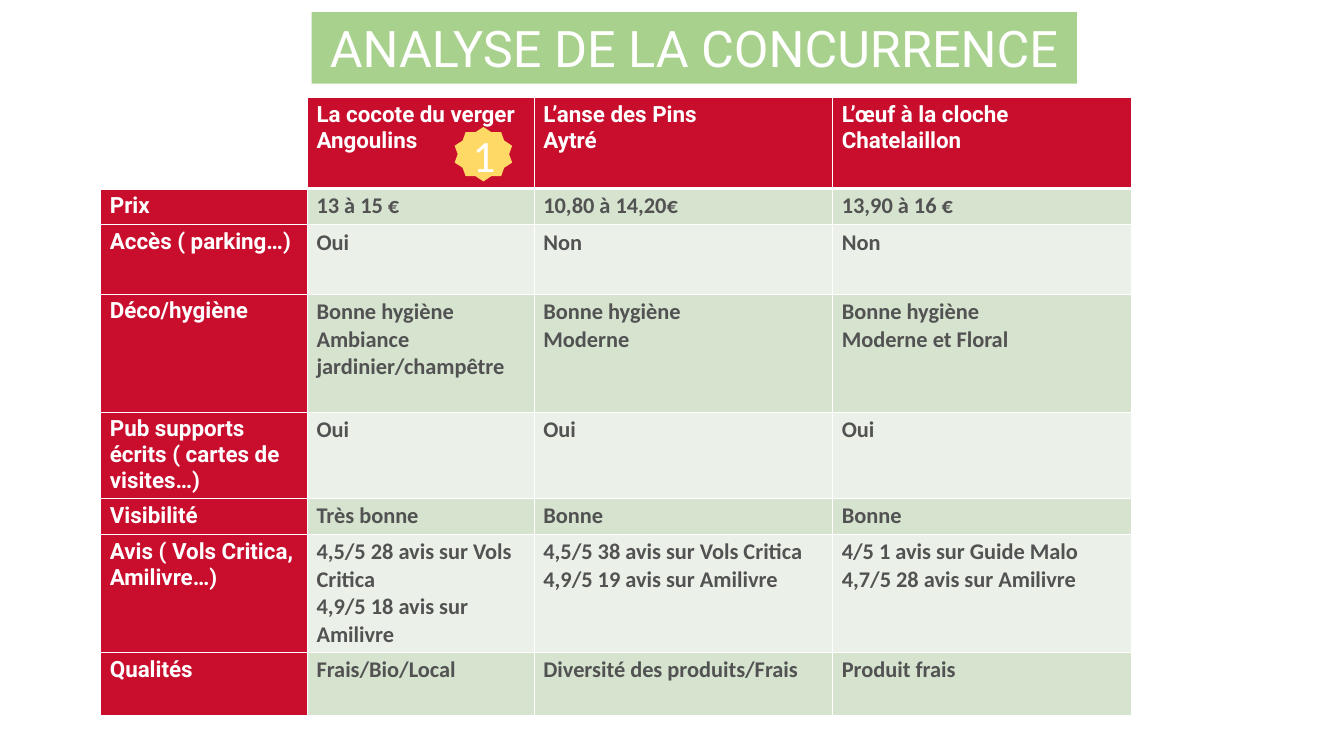
from pptx import Presentation
from pptx.util import Inches, Pt
from pptx.dml.color import RGBColor as RGB
from pptx.enum.shapes import MSO_SHAPE as Kind
from pptx.enum.text import PP_ALIGN as Align, MSO_ANCHOR as Anchor
from pptx.oxml import parse_xml
from pptx.oxml.ns import nsdecls

# Content
TITLE = "ANALYSE DE LA CONCURRENCE"
RANK = "1"
ROWS = [
    ("", "La cocote du verger\nAngoulins", "L’anse des Pins\nAytré",
     "L’œuf à la cloche\nChatelaillon"),
    ("Prix", "13 à 15 €", "10,80 à 14,20€", "13,90 à 16 €"),
    ("Accès ( parking…)", "Oui", "Non", "Non"),
    ("Déco/hygiène", "Bonne hygiène\nAmbiance jardinier/champêtre",
     "Bonne hygiène\nModerne", "Bonne hygiène\nModerne et Floral"),
    ("Pub supports écrits ( cartes de visites…)", "Oui", "Oui", "Oui"),
    ("Visibilité", "Très bonne", "Bonne", "Bonne"),
    ("Avis ( Vols Critica, Amilivre…)",
     "4,5/5 28 avis sur Vols Critica\n4,9/5 18 avis sur Amilivre",
     "4,5/5 38 avis sur Vols Critica\n4,9/5 19 avis sur Amilivre",
     "4/5 1 avis sur Guide Malo\n4,7/5 28 avis sur Amilivre"),
    ("Qualités", "Frais/Bio/Local", "Diversité des produits/Frais",
     "Produit frais"),
]
WIDTHS = [2.05, 2.25, 2.96, 2.96]
HEIGHTS = [0.9, 0.36, 0.69, 1.17, 0.78, 0.36, 1.17, 0.63]
COLORS = {"white": "FFFFFF", "red": "C90D2C", "dark": "D5E3CF",
          "light": "EBF1E9", "text": "525252", "title": "A9D18E",
          "star": "FFD966"}


def color(name):
    return RGB.from_string(COLORS[name])


def write(frame, text, size=16, font="Roboto", tint="white", bold=False,
          align=Align.LEFT):
    frame.word_wrap = True
    for i, line in enumerate(text.split("\n")):
        para = frame.paragraphs[0] if i == 0 else frame.add_paragraph()
        para.alignment = align
        run = para.add_run()
        run.text = line
        run.font.size, run.font.name, run.font.bold = Pt(size), font, bold
        run.font.color.rgb = color(tint)


def border(cell, base):
    props = cell._tc.get_or_add_tcPr()
    for i, side in enumerate("LRTB"):
        width = Pt(base if side == "B" else 1)
        props.insert(i, parse_xml(
            f'<a:ln{side} {nsdecls("a")} w="{width}"><a:solidFill>'
            f'<a:srgbClr val="{COLORS["white"]}"/></a:solidFill></a:ln{side}>'))


def badge(kind, box, fill, text, **style):
    shape = slide.shapes.add_shape(kind, *map(Inches, box))
    shape.shadow.inherit = False
    shape.fill.solid()
    shape.fill.fore_color.rgb = color(fill)
    shape.line.fill.background()
    write(shape.text_frame, text, align=Align.CENTER, **style)
    return shape


deck = Presentation()
deck.slide_width, deck.slide_height = Inches(13.33), Inches(7.5)
slide = deck.slides.add_slide(deck.slide_layouts[6])

# Comparison table
table = slide.shapes.add_table(
    len(ROWS), len(WIDTHS), Inches(1), Inches(0.97),
    Inches(sum(WIDTHS)), Inches(sum(HEIGHTS))).table
for col, width in zip(table.columns, WIDTHS):
    col.width = Inches(width)
for r, (row, height) in enumerate(zip(ROWS, HEIGHTS)):
    table.rows[r].height = Inches(height)
    for c, text in enumerate(row):
        cell = table.cell(r, c)
        cell.margin_left = cell.margin_right = Inches(0.09)
        cell.margin_top = cell.margin_bottom = Inches(0.04)
        head = r == 0 or c == 0
        band = "dark" if r % 2 else "light"
        cell.fill.solid()
        cell.fill.fore_color.rgb = color(
            "white" if not text else "red" if head else band)
        border(cell, 1 if r else 3)
        if text:
            write(cell.text_frame, text, bold=True,
                  font="Roboto" if head else "Calibri",
                  tint="white" if head else "text")

# Title and winner badge
title = badge(Kind.RECTANGLE, (3.09, 0.12, 7.59, 0.71), "title", TITLE, size=36)
title.text_frame.vertical_anchor = Anchor.TOP
star = badge(Kind.STAR_10_POINT, (4.51, 1.26, 0.57, 0.54), "star", RANK,
             size=32, font="Calibri")
star.text_frame.vertical_anchor = Anchor.MIDDLE

deck.save("out.pptx")
